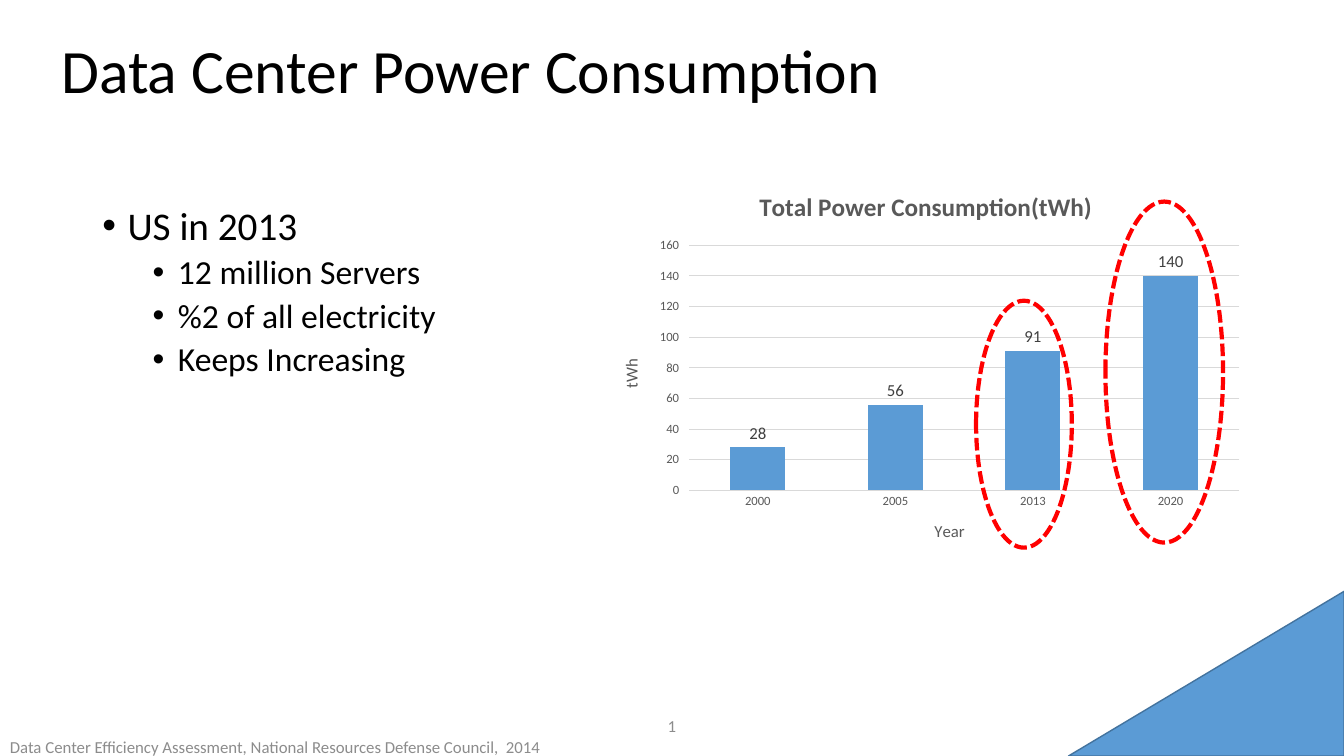
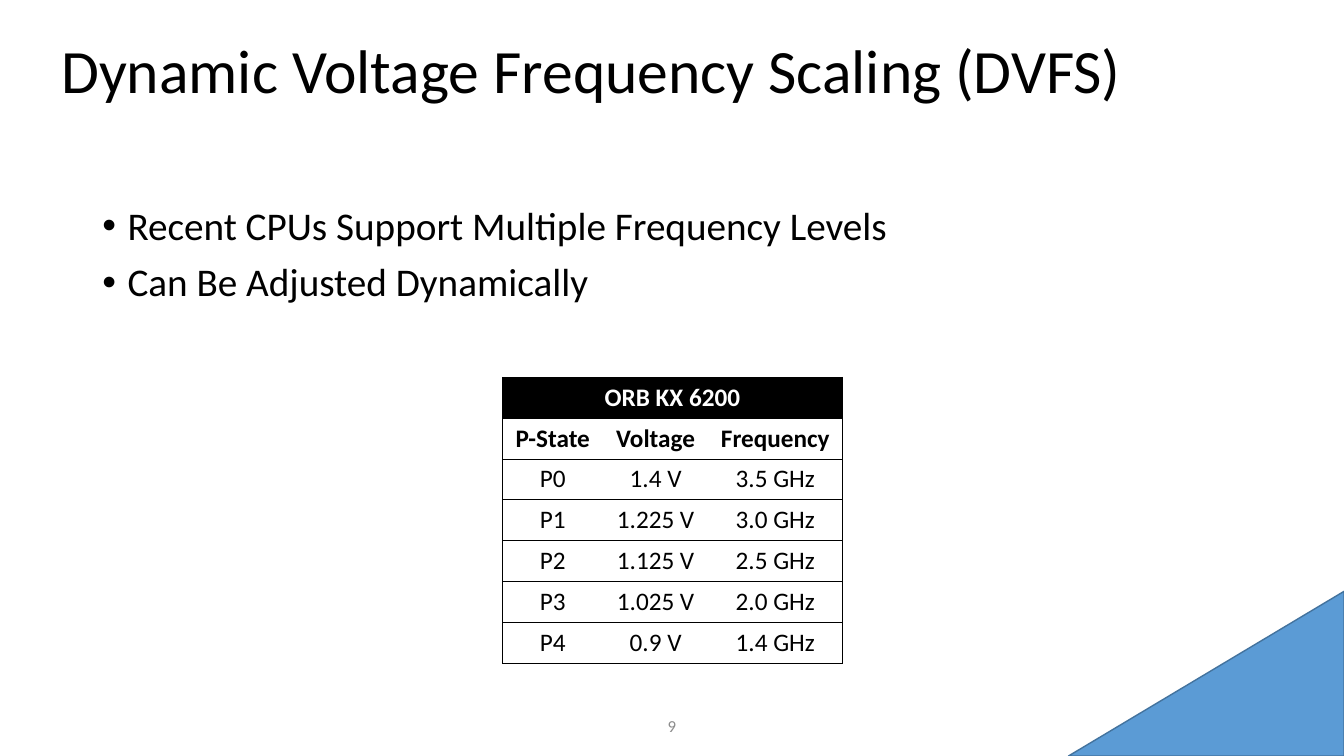
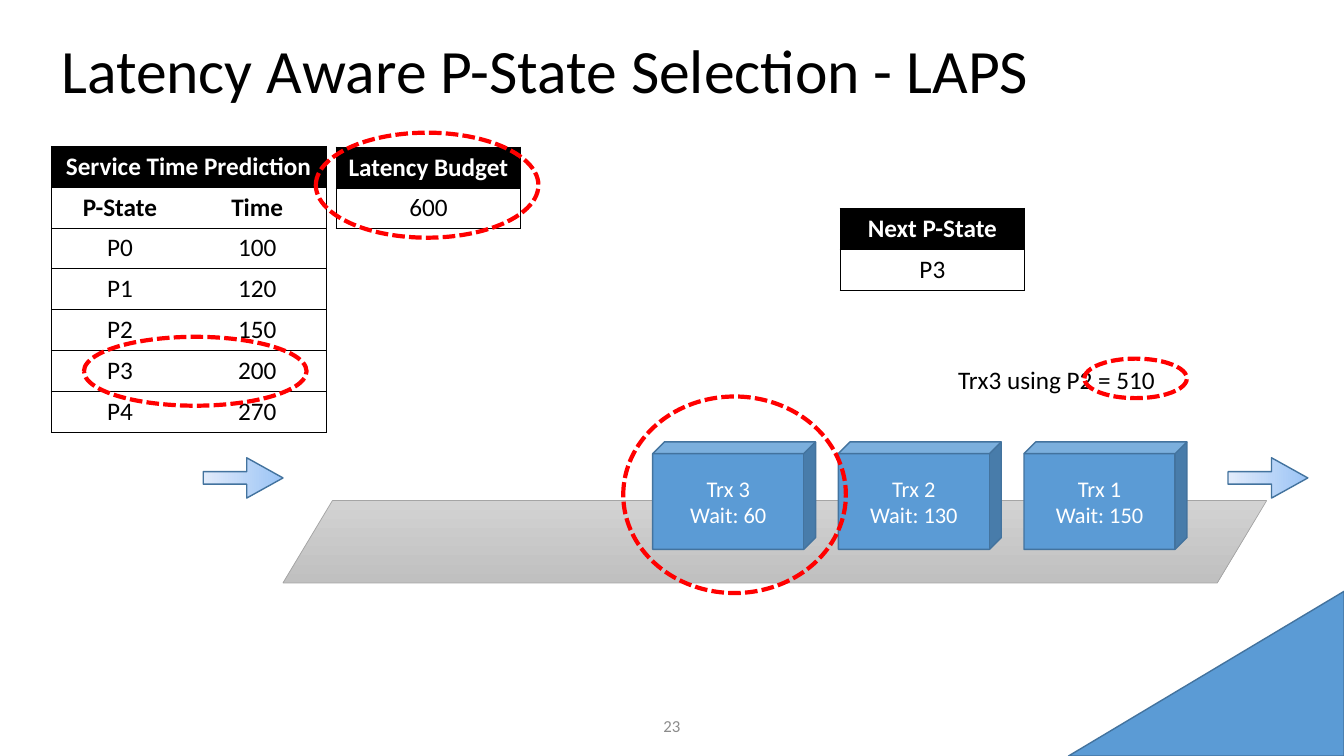
import lxml.etree
import pptx
import pptx.chart.data
import pptx.dml.color
import pptx.enum.chart
import pptx.enum.dml
import pptx.enum.shapes
import pptx.enum.text
import pptx.util

SHAPE = pptx.enum.shapes.MSO_SHAPE
ALIGN = pptx.enum.text.PP_ALIGN
MIDDLE = pptx.enum.text.MSO_ANCHOR.MIDDLE
A = "{http://schemas.openxmlformats.org/drawingml/2006/main}"
COLUMNS, ROWS = 160, 90
ROW_HEIGHT = 4.87
FONT = "Calibri"
BLACK, WHITE, RED = "000000", "FFFFFF", "FF0000"
BLUE, DARK_BLUE = "5B9BD5", "43739E"
FOOTER, CHART_TEXT, CHART_LABEL, GRID = "8C8C8C", "595959", "404040", "D9D9D9"


def rgb(code):
    return pptx.dml.color.RGBColor.from_string(code)


class Deck:
    """Slides on a 160 by 90 grid, drawn in one style."""

    def __init__(self):
        self.show = pptx.Presentation()
        self.show.slide_width = pptx.util.Inches(13.33)
        self.show.slide_height = pptx.util.Inches(7.5)

    def across(self, columns):
        return round(self.show.slide_width * columns / COLUMNS)

    def down(self, rows):
        return round(self.show.slide_height * rows / ROWS)

    def box(self, left, top, width, height):
        return self.across(left), self.down(top), self.across(width), self.down(height)

    def start(self, title, number):
        self.shapes = self.show.slides.add_slide(self.show.slide_layouts[6]).shapes
        corner = self.shape(SHAPE.ISOSCELES_TRIANGLE, (127.2, 70.4, 32.8, 19.6), [1])
        self.paint(corner, BLUE)
        heading = self.text((6.1, 0, 129.6, 17.4), [title], 44, anchor=MIDDLE)
        heading.paragraphs[0].line_spacing = 0.9
        self.text((62, 84, 36, 4.8), [number], 12, FOOTER, ALIGN.CENTER, MIDDLE)

    def style(self, font, size, color, bold=False):
        font.name, font.size, font.bold = FONT, pptx.util.Pt(size), bold
        font.color.rgb = rgb(color)

    def add_lines(self, frame, lines, size, color=BLACK, align=None, bold=False):
        for index, line in enumerate(lines):
            paragraph = frame.add_paragraph() if index else frame.paragraphs[0]
            paragraph.alignment = align
            run = paragraph.add_run()
            run.text = line
            self.style(run.font, size, color, bold)

    def text(self, place, lines, size, color=BLACK, align=None, anchor=None):
        frame = self.shapes.add_textbox(*self.box(*place)).text_frame
        frame.word_wrap = True
        frame.vertical_anchor = anchor
        self.add_lines(frame, lines, size, color, align)
        return frame

    def bullets(self, items):
        frame = self.text((11, 24, 138, 57.1), [line for level, line in items], 28)
        for index, (level, line) in enumerate(items):
            paragraph = frame.paragraphs[index]
            properties = paragraph._p.get_or_add_pPr()
            properties.set("marL", str(pptx.util.Inches(0.25 + 0.5 * level)))
            properties.set("indent", str(pptx.util.Inches(-0.25)))
            lxml.etree.SubElement(properties, A + "buFont", typeface="Arial")
            lxml.etree.SubElement(properties, A + "buChar", char="•")
            paragraph.level = level
            paragraph.line_spacing = 0.9
            paragraph.space_before = pptx.util.Pt((5 if level else 10) if index else 0)
            paragraph.runs[0].font.size = pptx.util.Pt(24 if level else 28)

    def shape(self, kind, place, adjustments=(), line=DARK_BLUE, width=1):
        shape = self.shapes.add_shape(kind, *self.box(*place))
        shape.shadow.inherit = False
        for index, value in enumerate(adjustments):
            shape.adjustments[index] = value
        shape.line.color.rgb = rgb(line)
        shape.line.width = pptx.util.Pt(width)
        return shape

    def paint(self, shape, color):
        shape.fill.solid()
        shape.fill.fore_color.rgb = rgb(color)

    def blend(self, shape, colors, angle):
        shape.fill.gradient()
        shape.fill.gradient_angle = angle
        for stop, color in zip(shape.fill.gradient_stops, colors):
            stop.color.rgb = rgb(color)

    def ring(self, *place):
        ring = self.shape(SHAPE.OVAL, place, line=RED, width=3)
        ring.fill.background()
        ring.line.dash_style = pptx.enum.dml.MSO_LINE.SQUARE_DOT

    def arrow(self, left):
        arrow = self.shape(SHAPE.RIGHT_ARROW, (left, 54.5, 9.5, 4.8), [0.31, 0.9])
        self.blend(arrow, ["9AC3F5", "E1EBFB"], 180)

    def belt(self, *place):
        belt = self.shape(SHAPE.PARALLELOGRAM, place, [0.6], "A5A5A5", 0.5)
        self.blend(belt, ["D2D2D2", "C0C0C0"], 270)

    def cube(self, place, lines):
        cube = self.shape(SHAPE.CUBE, place, [0.11])
        self.paint(cube, BLUE)
        cube.text_frame.vertical_anchor = MIDDLE
        self.add_lines(cube.text_frame, lines, 16, WHITE, ALIGN.CENTER)

    def border(self, cell, sides):
        properties = cell._tc.get_or_add_tcPr()
        for side in "LRTB":
            edge = lxml.etree.SubElement(properties, A + "ln" + side, w=str(pptx.util.Pt(0.5)))
            if side in sides:
                fill = lxml.etree.SubElement(edge, A + "solidFill")
                lxml.etree.SubElement(fill, A + "srgbClr", val=BLACK)
            else:
                lxml.etree.SubElement(edge, A + "noFill")

    def table(self, left, top, widths, title, rows, bold_rows=1):
        height = ROW_HEIGHT * (len(rows) + 1)
        place = self.box(left, top, sum(widths), height)
        table = self.shapes.add_table(len(rows) + 1, len(widths), *place).table
        table.first_row = table.horz_banding = False
        for column, width in zip(table.columns, widths):
            column.width = self.across(width)
        last = len(widths) - 1
        if last:
            table.cell(0, 0).merge(table.cell(0, last))
        header = [title] + [""] * last
        for r, values in enumerate([header] + rows):
            table.rows[r].height = self.down(ROW_HEIGHT)
            for c, value in enumerate(values):
                cell = table.cell(r, c)
                right = c == last or r == 0
                self.border(cell, "TB" + "L" * (c == 0) + "R" * right)
                cell.fill.solid()
                cell.fill.fore_color.rgb = rgb(WHITE if r else BLACK)
                if value:
                    self.add_lines(cell.text_frame, [value], 18, BLACK if r else WHITE,
                                   ALIGN.CENTER, r < bold_rows)

    def axis(self, axis, title):
        self.add_lines(axis.axis_title.text_frame, [title], 12, CHART_TEXT)
        self.style(axis.tick_labels.font, 9, CHART_TEXT)
        axis.format.line.color.rgb = rgb(GRID)
        axis.format.line.width = pptx.util.Pt(0.75)

    def columns(self, place, title, axis_titles, categories, values):
        data = pptx.chart.data.CategoryChartData()
        data.categories = categories
        data.add_series("Series 1", values)
        kind = pptx.enum.chart.XL_CHART_TYPE.COLUMN_CLUSTERED
        chart = self.shapes.add_chart(kind, *self.box(*place), data).chart
        self.style(chart.font, 10, BLACK)
        chart.has_legend = False
        self.add_lines(chart.chart_title.text_frame, [title], 18, CHART_TEXT, bold=True)
        chart.chart_title.include_in_layout = False
        across, up = chart.category_axis, chart.value_axis
        self.axis(across, axis_titles[0])
        self.axis(up, axis_titles[1])
        across.major_tick_mark = pptx.enum.chart.XL_TICK_MARK.NONE
        up.minimum_scale, up.maximum_scale, up.major_unit = 0, 160, 20
        up.format.line.fill.background()
        up.major_gridlines.format.line.color.rgb = rgb(GRID)
        up.major_gridlines.format.line.width = pptx.util.Pt(0.75)
        for body in up.axis_title.element.iter(A + "bodyPr"):
            body.set("rot", "-5400000")
            body.set("vert", "horz")
        plot = chart.plots[0]
        plot.gap_width = 150
        plot.vary_by_categories = False
        self.paint(plot.series[0].format, BLUE)
        labels = plot.series[0].data_labels
        labels.show_value = True
        labels.position = pptx.enum.chart.XL_LABEL_POSITION.OUTSIDE_END
        self.style(labels.font, 12, CHART_LABEL)


def power_consumption(deck):
    deck.start("Data Center Power Consumption", "1")
    deck.columns((71.3, 20.4, 77.8, 46.7), "Total Power Consumption(tWh)", ("Year", "tWh"),
                 ["2000", "2005", "2013", "2020"], [28, 56, 91, 140])
    deck.bullets([(0, "US in 2013"), (1, "12 million Servers"),
                  (1, "%2 of all electricity"), (1, "Keeps Increasing")])
    source = "Data Center Efficiency Assessment, National Resources Defense Council,  2014"
    deck.text((0, 86.8, 67.3, 4.2), [source], 12, FOOTER, anchor=MIDDLE)
    deck.ring(116.2, 35.8, 11.4, 29.4)
    deck.ring(131.6, 24, 14, 40.6)


def frequency_scaling(deck):
    deck.start("Dynamic Voltage Frequency Scaling (DVFS)", "9")
    deck.bullets([(0, "Recent CPUs Support Multiple Frequency Levels"),
                  (0, "Can Be Adjusted Dynamically")])
    deck.table(59.8, 44.9, [12, 12.5, 16], "ORB KX 6200", [
        ["P-State", "Voltage", "Frequency"],
        ["P0", "1.4 V", "3.5 GHz"],
        ["P1", "1.225 V", "3.0 GHz"],
        ["P2", "1.125 V", "2.5 GHz"],
        ["P3", "1.025 V", "2.0 GHz"],
        ["P4", "0.9 V", "1.4 GHz"],
    ], bold_rows=2)


def state_selection(deck):
    deck.start("Latency Aware P-State Selection - LAPS", "23")
    times = ["100", "120", "150", "200", "270"]
    predictions = [[f"P{state}", time] for state, time in enumerate(times)]
    deck.table(6.1, 17.4, [16.35, 16.35], "Service Time Prediction",
               [["P-State", "Time"]] + predictions, bold_rows=2)
    deck.belt(33.7, 59.6, 117.1, 9.8)
    for left in (24.2, 146.2):
        deck.arrow(left)
    deck.text((112.9, 42.8, 28.4, 4.8), ["Trx3 using P2 = 510"], 18)
    deck.table(40, 17.5, [22], "Latency Budget", [["600"]])
    deck.table(100, 24.8, [22], "Next P-State", [["P3"]])
    deck.ring(10, 40.1, 26.5, 8.2)
    deck.ring(37.6, 15.8, 26.5, 12.5)
    deck.ring(129.1, 42.7, 12.2, 4.7)
    for index, wait in enumerate([60, 130, 150]):
        deck.cube((77.7 + 22.1 * index, 52.6, 19.4, 12.8), [f"Trx {3 - index}", f"Wait: {wait}"])
    deck.ring(74.2, 47.2, 26.5, 23.4)


def main():
    deck = Deck()
    power_consumption(deck)
    frequency_scaling(deck)
    state_selection(deck)
    deck.show.save("out.pptx")


if __name__ == "__main__":
    main()
